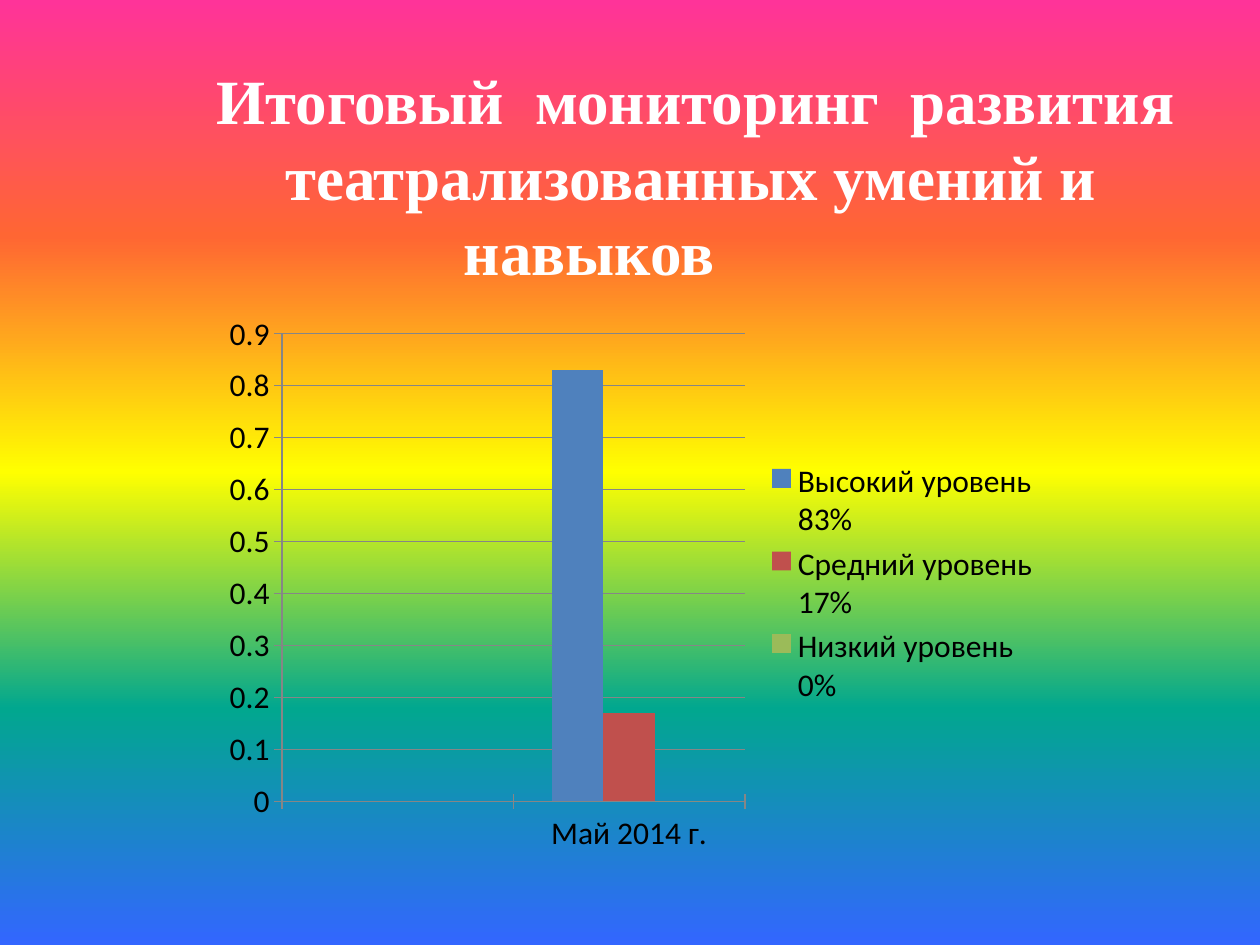
from dataclasses import dataclass

import pptx
import pptx.chart.data
import pptx.dml.color
import pptx.enum.chart
import pptx.enum.text
import pptx.oxml
import pptx.oxml.ns
import pptx.util
from lxml import etree
from pptx.util import Cm


@dataclass(frozen=True)
class Theme:
    background: tuple = ("FF3399", "FF6633", "FFFF00", "01A78F", "3366FF")
    series: tuple = ("4F81BD", "C0504D", "9BBB59")
    title: str = "FFFFFF"
    text: str = "000000"
    line: str = "868686"
    title_font: str = "Times New Roman"
    chart_font: str = "Calibri"
    title_size: int = 36
    chart_size: int = 18


theme = Theme()


def rgb(value):
    return pptx.dml.color.RGBColor.from_string(value)


def set_font(font, name, size, color):
    font.name = name
    font.size = pptx.util.Pt(size)
    font.color.rgb = rgb(color)


deck = pptx.Presentation()
deck.slide_width, deck.slide_height = Cm(25.4), Cm(19.05)
page = deck.slides.add_slide(deck.slide_layouts[6])

# Rainbow background, evenly spaced from top to bottom
fill = page.background.fill
fill.gradient()
fill.gradient_angle = 270
qn = pptx.oxml.ns.qn
stops = page.element.find(".//" + qn("a:gsLst"))
for stop in list(stops):
    stops.remove(stop)
step = 100000 // (len(theme.background) - 1)
for index, color in enumerate(theme.background):
    stop = etree.SubElement(stops, qn("a:gs"), pos=str(index * step))
    etree.SubElement(stop, qn("a:srgbClr"), val=color)

# Title: the first line of each paragraph is indented
box = page.shapes.add_textbox(Cm(-0.71), Cm(1.12), Cm(25.17), Cm(4.88))
frame = box.text_frame
frame.word_wrap = True
frame.auto_size = pptx.enum.text.MSO_AUTO_SIZE.SHAPE_TO_FIT_TEXT
title_lines = (
    ("Итоговый  мониторинг  развития", Cm(4.3)),
    ("театрализованных умений и навыков", Cm(4.1)),
)
for index, (line, indent) in enumerate(title_lines):
    para = frame.add_paragraph() if index else frame.paragraphs[0]
    para.text = line
    para.alignment = pptx.enum.text.PP_ALIGN.CENTER
    para.font.bold = True
    set_font(para.font, theme.title_font, theme.title_size, theme.title)
    properties = para._p.get_or_add_pPr()
    properties.set("marL", "0")
    properties.set("indent", str(indent))

# Column chart of skill levels
data = pptx.chart.data.CategoryChartData()
data.categories = ["", "Май 2014 г."]
levels = (
    ("Высокий уровень 83%", 0.83),
    ("Средний уровень 17%", 0.17),
    ("Низкий уровень 0%", 0),
)
for name, share in levels:
    data.add_series(name, (None, share))
chart = page.shapes.add_chart(
    pptx.enum.chart.XL_CHART_TYPE.COLUMN_CLUSTERED,
    Cm(4.29), Cm(6.12), Cm(16.94), Cm(11.28), data,
).chart
set_font(chart.font, theme.chart_font, theme.chart_size, theme.text)
chart.has_title = False
chart.has_legend = True
chart.legend.position = pptx.enum.chart.XL_LEGEND_POSITION.RIGHT
chart.legend.include_in_layout = False

plot = chart.plots[0]
plot.vary_by_categories = False
plot.gap_width = 150
for series, color in zip(plot.series, theme.series):
    series.format.fill.solid()
    series.format.fill.fore_color.rgb = rgb(color)

value_axis = chart.value_axis
value_axis.minimum_scale, value_axis.maximum_scale = 0, 0.9
value_axis.major_unit = 0.1
value_axis.has_major_gridlines = True
value_axis.tick_labels.number_format = "General"
value_axis.tick_labels.number_format_is_linked = False
for axis in (chart.category_axis, value_axis):
    axis.major_tick_mark = pptx.enum.chart.XL_TICK_MARK.CROSS
    axis.format.line.color.rgb = rgb(theme.line)
    axis.format.line.width = pptx.util.Pt(0.75)
gridline = value_axis.major_gridlines.format.line
gridline.color.rgb = rgb(theme.line)
gridline.width = pptx.util.Pt(0.75)

deck.save("out.pptx")
